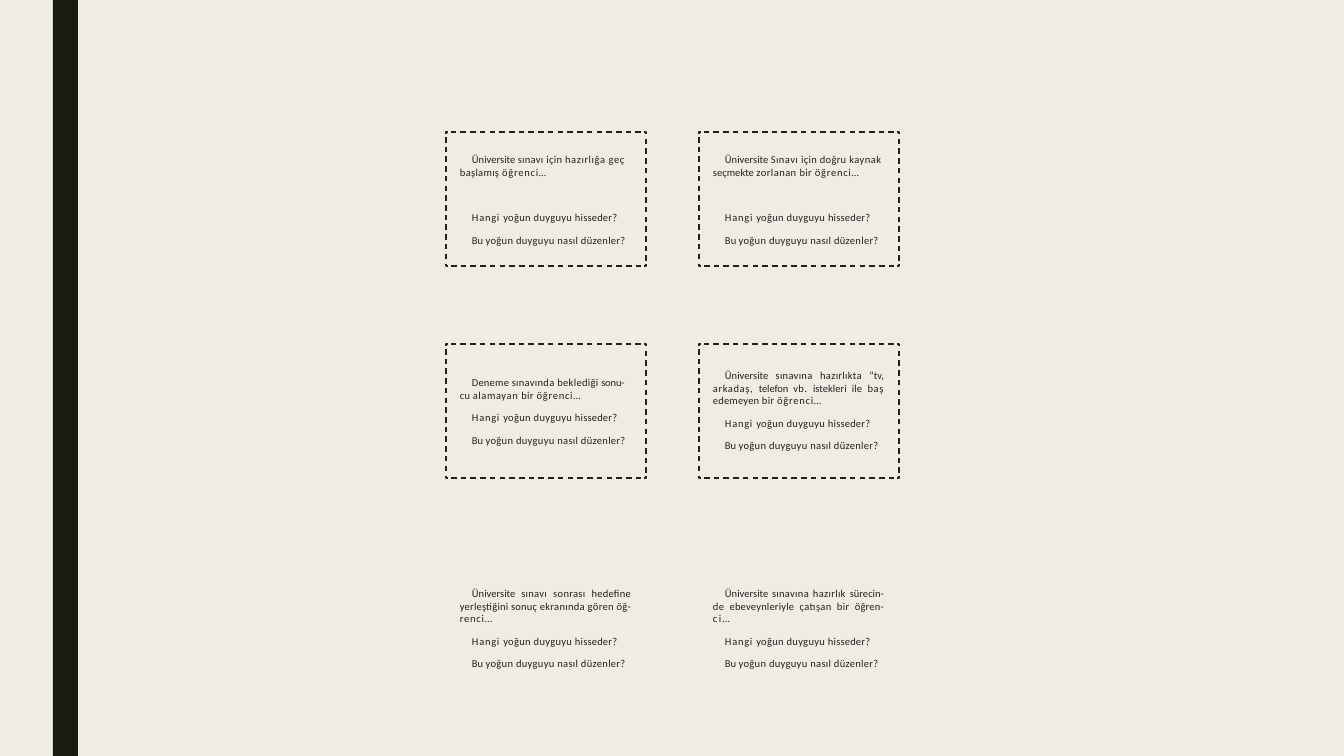
from dataclasses import dataclass

from lxml.etree import SubElement
from pptx import Presentation
from pptx.dml.color import RGBColor
from pptx.enum.dml import MSO_LINE
from pptx.enum.shapes import MSO_CONNECTOR, MSO_SHAPE
from pptx.enum.text import MSO_AUTO_SIZE, PP_ALIGN
from pptx.oxml.ns import qn
from pptx.util import Pt

SLIDE_WIDTH, SLIDE_HEIGHT = 1344, 756
EMU_PER_PX = 12192000 / SLIDE_WIDTH
COLORS = {"background": "EFEDE3", "bar": "191B0E", "ink": "231F20"}

COLUMN_LEFTS = (446, 699)
FRAME_TOPS = (132, 344)
FRAME_WIDTH, FRAME_HEIGHT = 200, 134
CORNER = 2
TEXT_INSET = 13
QUESTION_INSET = 25

# A run is its wording and its letter spacing in hundredths of a point.
Run = tuple[str, int]
QUESTIONS: tuple[list[Run], ...] = (
    [("Hangi ", 50), ("yoğun duyguyu ", 20), ("hisseder?", 10)],
    [("Bu ", 0), ("yoğun duyguyu nasıl düzenler?", 20)],
)


@dataclass
class Card:
    column: int
    top: int
    height: int
    situation: list[Run]
    justified: bool = False
    question_top: int | None = None


CARDS = [
    Card(0, 152, 26, [
        ("Üniversite ", 0), ("sınavı için ", 20), ("hazırlığa geç ", 40),
        ("başlamış ", 20), ("öğrenci…", 50)], question_top=210),
    Card(0, 375, 73, [
        ("Deneme ", 10), ("sınavında beklediği ", 20), ("sonu- ", -10),
        ("cu ", 10), ("alamayan ", 40), ("bir ", 20), ("öğrenci…", 50)]),
    Card(0, 586, 85, [
        ("Üniversite ", 0), ("sınavı sonrası ", 20),
        ("hedefine yerleştiğini sonuç ", 10), ("ekranında gören ", 20),
        ("öğ- ", 10), ("renci…", 50)], justified=True),
    Card(1, 152, 26, [
        ("Üniversite ", 0), ("Sınavı ", 30), ("için doğru ", 20), ("kaynak ", 30),
        ("seçmekte ", 0), ("zorlanan ", 30), ("bir ", 20), ("öğrenci…", 50)],
        question_top=210),
    Card(1, 368, 85, [
        ("Üniversite ", 0), ("sınavına hazırlıkta ", 20), ("“tv, ", 0),
        ("arkadaş, ", 40), ("telefon ", -10), ("vb. ", 30), ("istekleri ", 0),
        ("ile ", 10), ("baş ", 40), ("edemeyen ", 10), ("bir ", 20),
        ("öğrenci…", 50)], justified=True),
    Card(1, 586, 85, [
        ("Üniversite ", 0), ("sınavına hazırlık ", 20), ("sürecin- ", 0),
        ("de ", 20), ("ebeveynleriyle ", 10), ("çatışan bir ", 20),
        ("öğren- ", 10), ("ci…", 100)], justified=True),
]


def px(length: int) -> int:
    return round(length * EMU_PER_PX)


def color(name: str) -> RGBColor:
    return RGBColor.from_string(COLORS[name])


def add_text_box(slide, left: int, top: int, width: int, height: int):
    box = slide.shapes.add_textbox(px(left), px(top), px(width), px(height))
    frame = box.text_frame
    frame.word_wrap = True
    frame.auto_size = MSO_AUTO_SIZE.SHAPE_TO_FIT_TEXT
    frame.margin_left = frame.margin_right = frame.margin_bottom = 0
    frame.margin_top = px(1)
    return frame


def write_paragraph(paragraph, runs: list[Run], *, margin: int = 1, indent: int = 0,
                    right: int = 0, before: float = 0, line_spacing: float = 1.0,
                    justified: bool = False) -> None:
    paragraph.alignment = PP_ALIGN.JUSTIFY if justified else PP_ALIGN.LEFT
    paragraph.space_before = Pt(before)
    paragraph.line_spacing = line_spacing
    properties = paragraph._p.get_or_add_pPr()
    for name, length in (("marL", margin), ("marR", right), ("indent", indent)):
        properties.set(name, str(px(length)))
    for text, letter_spacing in runs:
        run = paragraph.add_run()
        run.text = text
        run.font.name = "Calibri"
        run.font.size = Pt(7.5)
        run.font.color.rgb = color("ink")
        run._r.get_or_add_rPr().set("spc", str(letter_spacing))


def draw_card(slide, card: Card) -> None:
    left = COLUMN_LEFTS[card.column]
    frame = add_text_box(slide, left + TEXT_INSET, card.top, 175, card.height)
    write_paragraph(frame.paragraphs[0], card.situation, indent=12, before=0.6,
                    right=3 if card.justified else 0, justified=card.justified)
    if card.question_top is None:
        for question in QUESTIONS:
            write_paragraph(frame.add_paragraph(), question, margin=13,
                            line_spacing=1.79, justified=card.justified)
        return
    frame = add_text_box(slide, left + QUESTION_INSET, card.question_top, 159, 36)
    write_paragraph(frame.paragraphs[0], QUESTIONS[0], before=0.6)
    write_paragraph(frame.add_paragraph(), QUESTIONS[1], before=7.1)


def draw_edge(slide, start: tuple[int, int], end: tuple[int, int]) -> None:
    edge = slide.shapes.add_connector(
        MSO_CONNECTOR.STRAIGHT, *map(px, start), *map(px, end))
    edge.line.color.rgb = color("ink")
    edge.line.width = Pt(1)
    edge.line.dash_style = MSO_LINE.DASH
    SubElement(edge._element.spPr, qn("a:effectLst"))


def draw_corner(slide, x: int, y: int, toward_x: int, toward_y: int) -> None:
    """Draw a small solid angle at (x, y) whose arms point into the frame."""
    builder = slide.shapes.build_freeform(px(x), px(y + toward_y * CORNER))
    builder.add_line_segments(
        [(px(x), px(y)), (px(x + toward_x * CORNER), px(y))], close=False)
    corner = builder.convert_to_shape()
    corner.shadow.inherit = False
    corner.fill.background()
    corner.line.color.rgb = color("ink")
    corner.line.width = Pt(1)


def draw_frame(slide, left: int, top: int) -> None:
    right, bottom = left + FRAME_WIDTH, top + FRAME_HEIGHT
    draw_edge(slide, (left, top + 5), (left, bottom - 3))
    draw_edge(slide, (left + 5, bottom), (right - 4, bottom))
    draw_edge(slide, (right, bottom - 5), (right, top + 3))
    draw_edge(slide, (right - 5, top), (left + 4, top))
    for x, toward_x in ((left, 1), (right, -1)):
        for y, toward_y in ((top, 1), (bottom, -1)):
            draw_corner(slide, x, y, toward_x, toward_y)


def main() -> None:
    presentation = Presentation()
    presentation.slide_width = px(SLIDE_WIDTH)
    presentation.slide_height = px(SLIDE_HEIGHT)
    slide = presentation.slides.add_slide(presentation.slide_layouts[6])
    slide.background.fill.solid()
    slide.background.fill.fore_color.rgb = color("background")

    bar = slide.shapes.add_shape(
        MSO_SHAPE.RECTANGLE, px(53), 0, px(25), px(SLIDE_HEIGHT))
    bar.shadow.inherit = False
    bar.fill.solid()
    bar.fill.fore_color.rgb = color("bar")
    bar.line.fill.background()

    for left in COLUMN_LEFTS:
        for top in FRAME_TOPS:
            draw_frame(slide, left, top)
    for card in CARDS:
        draw_card(slide, card)
    presentation.save("out.pptx")


if __name__ == "__main__":
    main()
